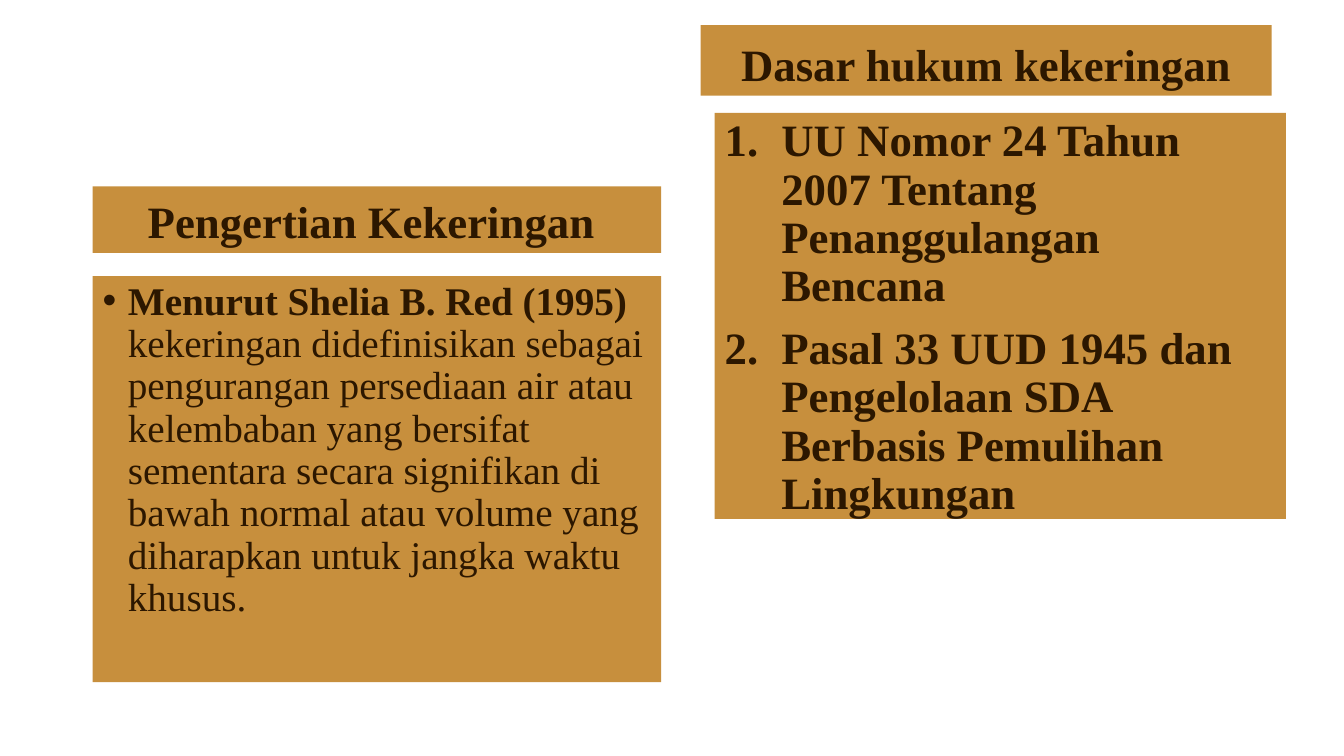
"""Builds a slide with the definition and the legal basis of drought."""
from pptx import Presentation
from pptx.dml.color import RGBColor
from pptx.enum.shapes import MSO_SHAPE as Shape
from pptx.enum.text import MSO_ANCHOR as Anchor, PP_ALIGN as Align
from pptx.oxml.ns import qn
from pptx.util import Pt
from lxml.etree import SubElement

OCHRE = RGBColor(0xC7, 0x8F, 0x3D)
DARK_BROWN = RGBColor(0x2C, 0x17, 0x00)

deck = Presentation()
deck.slide_width, deck.slide_height = Pt(960), Pt(540)
slide = deck.slides.add_slide(deck.slide_layouts[6])


def add_panel(paragraphs, left, top, width, height, size=32, align=Align.LEFT,
              anchor=Anchor.TOP, indent=0, bullet=None):
    panel = slide.shapes.add_shape(Shape.RECTANGLE, Pt(left), Pt(top), Pt(width), Pt(height))
    panel.shadow.inherit = False
    panel.fill.solid()
    panel.fill.fore_color.rgb = OCHRE
    panel.line.fill.background()
    frame = panel.text_frame
    frame.word_wrap = True
    frame.vertical_anchor = anchor
    for index, runs in enumerate(paragraphs):
        paragraph = frame.add_paragraph() if index else frame.paragraphs[0]
        paragraph.alignment = align
        paragraph.line_spacing = 0.9
        paragraph.space_before = Pt(10 if index else 0)
        if bullet:
            properties = paragraph._p.get_or_add_pPr()
            properties.set("marL", str(Pt(indent)))
            properties.set("indent", str(-Pt(indent)))
            tag, attribute, value = bullet
            if tag == "a:buChar":
                SubElement(properties, qn("a:buFont"), typeface="Arial")
            else:
                SubElement(properties, qn("a:buFont"), typeface="+mj-lt")
            SubElement(properties, qn(tag)).set(attribute, value)
        for text, bold in runs:
            run = paragraph.add_run()
            run.text = text
            run.font.name = "Times New Roman"
            run.font.size = Pt(size)
            run.font.bold = bold
            run.font.color.rgb = DARK_BROWN


heading = {"align": Align.CENTER, "anchor": Anchor.BOTTOM}

add_panel([[("Pengertian Kekeringan ", True)]], 66.24, 133.2, 406, 47.5, **heading)
add_panel(
    [[("Menurut Shelia B. Red (1995) ", True),
      ("kekeringan didefinisikan sebagai pengurangan persediaan air atau kelembaban "
       "yang bersifat sementara secara signifikan di bawah normal atau volume yang "
       "diharapkan untuk jangka waktu khusus.", False)]],
    66.24, 197.28, 406, 290, size=28, indent=18, bullet=("a:buChar", "char", "•"))

add_panel([[("Dasar hukum kekeringan", True)]], 500.4, 18, 408, 50.4, **heading)
add_panel(
    [[("UU Nomor 24 Tahun 2007 Tentang Penanggulangan Bencana", True)],
     [("Pasal 33 UUD 1945 dan Pengelolaan SDA Berbasis Pemulihan Lingkungan", True)]],
    510.48, 80.64, 408, 290, indent=40.5, bullet=("a:buAutoNum", "type", "arabicPeriod"))

deck.save("out.pptx")
